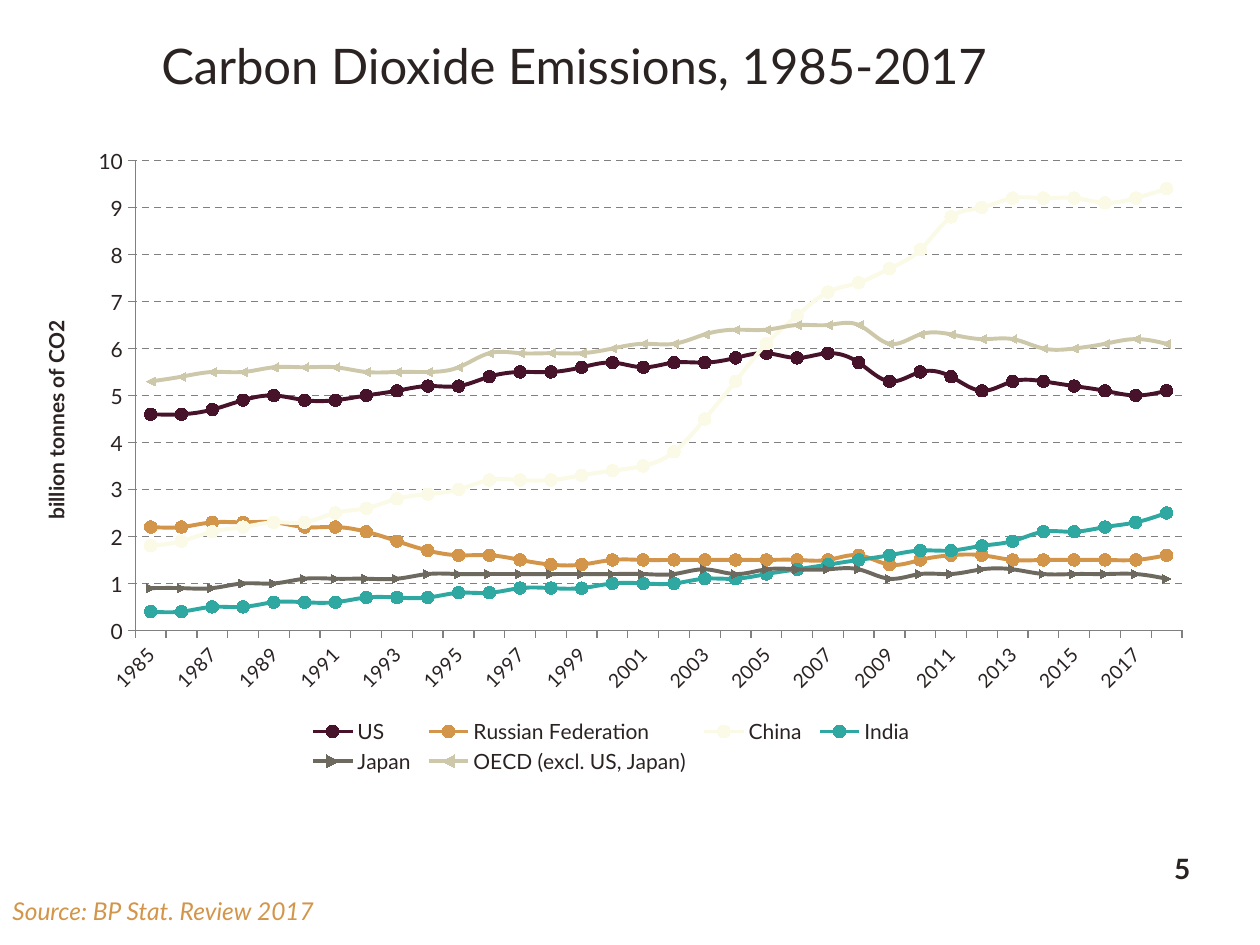
from lxml import etree
from pptx import Presentation
from pptx.chart.data import CategoryChartData
from pptx.dml.color import RGBColor
from pptx.enum import chart as ch, dml, text
from pptx.oxml import parse_xml
from pptx.oxml.ns import nsdecls, qn
from pptx.util import Inches, Pt

INK = RGBColor(0x2B, 0x22, 0x22)
GOLD = RGBColor(0xD3, 0x95, 0x49)
PLUM = RGBColor(0x47, 0x13, 0x2B)
CREAM = RGBColor(0xFA, 0xFA, 0xE6)
TEAL = RGBColor(0x2E, 0xA8, 0xA0)
STONE = RGBColor(0x6D, 0x69, 0x5F)
SAND = RGBColor(0xCD, 0xC8, 0xAA)
GRAY = RGBColor(0x80, 0x80, 0x80)

YEARS = [str(year) for year in range(1985, 2019)]
SERIES = [
    ("US", PLUM, True,
     [4.6, 4.6, 4.7, 4.9, 5, 4.9, 4.9, 5, 5.1, 5.2, 5.2, 5.4, 5.5, 5.5, 5.6, 5.7, 5.6,
      5.7, 5.7, 5.8, 5.9, 5.8, 5.9, 5.7, 5.3, 5.5, 5.4, 5.1, 5.3, 5.3, 5.2, 5.1, 5, 5.1]),
    ("Russian Federation", GOLD, True,
     [2.2, 2.2, 2.3, 2.3, 2.3, 2.2, 2.2, 2.1, 1.9, 1.7, 1.6, 1.6, 1.5, 1.4, 1.4, 1.5, 1.5,
      1.5, 1.5, 1.5, 1.5, 1.5, 1.5, 1.6, 1.4, 1.5, 1.6, 1.6, 1.5, 1.5, 1.5, 1.5, 1.5, 1.6]),
    ("China", CREAM, True,
     [1.8, 1.9, 2.1, 2.2, 2.3, 2.3, 2.5, 2.6, 2.8, 2.9, 3, 3.2, 3.2, 3.2, 3.3, 3.4, 3.5,
      3.8, 4.5, 5.3, 6.1, 6.7, 7.2, 7.4, 7.7, 8.1, 8.8, 9, 9.2, 9.2, 9.2, 9.1, 9.2, 9.4]),
    ("India", TEAL, True,
     [0.4, 0.4, 0.5, 0.5, 0.6, 0.6, 0.6, 0.7, 0.7, 0.7, 0.8, 0.8, 0.9, 0.9, 0.9, 1, 1,
      1, 1.1, 1.1, 1.2, 1.3, 1.4, 1.5, 1.6, 1.7, 1.7, 1.8, 1.9, 2.1, 2.1, 2.2, 2.3, 2.5]),
    ("Japan", STONE, False,
     [0.9, 0.9, 0.9, 1, 1, 1.1, 1.1, 1.1, 1.1, 1.2, 1.2, 1.2, 1.2, 1.2, 1.2, 1.2, 1.2,
      1.2, 1.3, 1.2, 1.3, 1.3, 1.3, 1.3, 1.1, 1.2, 1.2, 1.3, 1.3, 1.2, 1.2, 1.2, 1.2, 1.1]),
    ("OECD (excl. US, Japan)", SAND, False,
     [5.3, 5.4, 5.5, 5.5, 5.6, 5.6, 5.6, 5.5, 5.5, 5.5, 5.6, 5.9, 5.9, 5.9, 5.9, 6, 6.1,
      6.1, 6.3, 6.4, 6.4, 6.5, 6.5, 6.5, 6.1, 6.3, 6.3, 6.2, 6.2, 6, 6, 6.1, 6.2, 6.1]),
]


def style(font, size, color=INK, **kw):
    look = {"name": "Lato", "size": Pt(size), "bold": False, **kw}
    for key, value in look.items():
        setattr(font, key, value)
    font.color.rgb = color


def write(shape, words, size, color=INK, **kw):
    frame = shape.text_frame
    look = {"text": words, "word_wrap": True, "vertical_anchor": text.MSO_ANCHOR.TOP,
            "auto_size": text.MSO_AUTO_SIZE.NONE}
    for key, value in look.items():
        setattr(frame, key, value)
    para = frame.paragraphs[0]
    para.alignment = text.PP_ALIGN.LEFT
    style(para.runs[0].font, size, color, **kw)


def label(slide, box, words, size, color=INK, **kw):
    shape = slide.shapes.add_textbox(*map(Inches, box))
    write(shape, words, size, color, **kw)


def title(slide, box, words):
    shape = slide.shapes.title
    for key, value in zip(("left", "top", "width", "height"), box):
        setattr(shape, key, Inches(value))
    write(shape, words, 28)


def place(part, box, inner=False):
    for old in part.findall(qn("c:layout")):
        part.remove(old)
    layout = parse_xml(f"<c:layout {nsdecls('c')}><c:manualLayout/></c:layout>")
    rules = [("layoutTarget", "inner")] if inner else []
    rules += [("xMode", "edge"), ("yMode", "edge"), *zip("xywh", box)]
    for tag, value in rules:
        etree.SubElement(layout[0], qn(f"c:{tag}")).set("val", str(value))
    if inner:
        part.insert(0, layout)
    else:
        part.find(qn("c:legendPos")).addnext(layout)


def stroke(line, color, width):
    line.color.rgb = color
    line.width = Pt(width)


def axes(chart):
    years, tons = chart.category_axis, chart.value_axis
    for axis, size in ((years, 11), (tons, 12)):
        axis.major_tick_mark = ch.XL_TICK_MARK.OUTSIDE
        axis.minor_tick_mark = ch.XL_TICK_MARK.NONE
        style(axis.tick_labels.font, size)
        stroke(axis.format.line, GRAY, 0.75)
    years.has_major_gridlines = False
    turn = years._element.find(qn("c:txPr")).find(qn("a:bodyPr"))
    turn.set("rot", "-2700000")
    turn.set("vert", "horz")
    skip = parse_xml(f'<c:tickLblSkip {nsdecls("c")} val="2"/>')
    years._element.find(qn("c:noMultiLvlLbl")).addprevious(skip)
    look = {"minimum_scale": 0, "maximum_scale": 10, "major_unit": 1,
            "has_major_gridlines": True, "has_title": True}
    for key, value in look.items():
        setattr(tons, key, value)
    tons.tick_labels.number_format = "0"
    tons.tick_labels.number_format_is_linked = False
    grid = tons.major_gridlines.format.line
    stroke(grid, GRAY, 1)
    grid.dash_style = dml.MSO_LINE.DASH
    frame = tons.axis_title.text_frame
    frame.text = "billion tonnes of CO2"
    style(frame.paragraphs[0].runs[0].font, 12, bold=True)


def lines(chart):
    for line, (_, color, dots, _) in zip(chart.plots[0].series, SERIES):
        line.smooth = True
        stroke(line.format.line, color, 2.25)
        if dots:
            mark = line.marker
            mark.style = ch.XL_MARKER_STYLE.CIRCLE
            mark.size = 7
            mark.format.fill.solid()
            mark.format.fill.fore_color.rgb = color
            stroke(mark.format.line, color, 0.75)


def graph(slide, box):
    data = CategoryChartData(number_format="0.0")
    data.categories = YEARS
    for name, _, _, values in SERIES:
        data.add_series(name, values)
    kind = ch.XL_CHART_TYPE.LINE_MARKERS
    chart = slide.shapes.add_chart(kind, *map(Inches, box), data).chart
    style(chart.font, 12)
    chart.has_title = False
    chart.has_legend = True
    chart.plots[0].vary_by_categories = False
    legend = chart.legend
    legend.position = ch.XL_LEGEND_POSITION.BOTTOM
    legend.include_in_layout = False
    style(legend.font, 12)
    axes(chart)
    lines(chart)
    place(chart._chartSpace.chart.plotArea, (0.1, 0.04, 0.88, 0.73), True)
    place(legend._element, (0.24, 0.9, 0.52, 0.1))


def main():
    deck = Presentation()
    deck.slide_width, deck.slide_height = Inches(10), Inches(7.5)
    slide = deck.slides.add_slide(deck.slide_layouts[0])
    sub = slide.placeholders[1].element
    sub.getparent().remove(sub)
    title(slide, (1.18, 0.23, 8.23, 0.84), "Carbon Dioxide Emissions, 1985-2017")
    label(slide, (9.22, 6.71, 0.47, 0.31), "5", 16, bold=True)
    label(slide, (0, 7.06, 3.72, 0.34), "Source: BP Stat. Review 2017", 14, GOLD, italic=True)
    graph(slide, (0.13, 1.07, 9.44, 5.11))
    deck.save("out.pptx")


if __name__ == "__main__":
    main()
